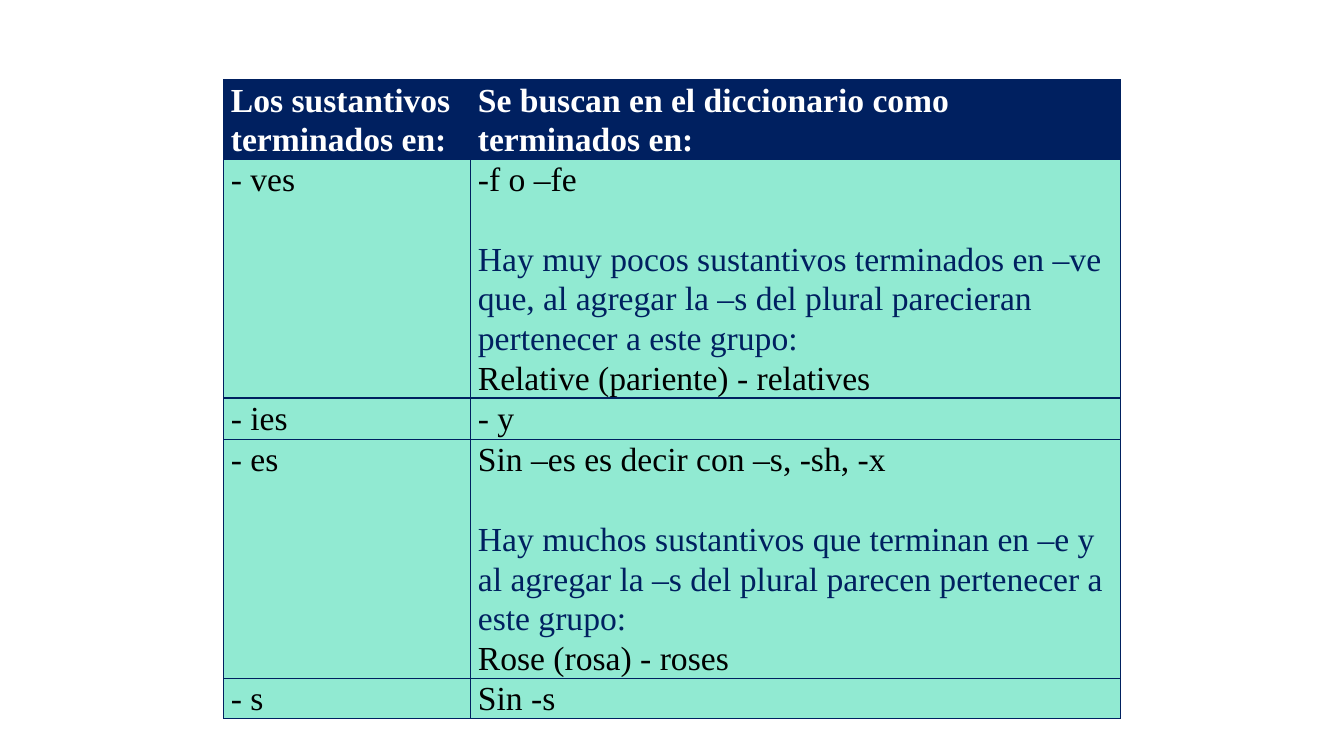
from lxml import etree
from pptx import Presentation
from pptx.dml.color import RGBColor
from pptx.oxml.ns import qn
from pptx.util import Inches, Pt

NAVY = RGBColor(0x00, 0x20, 0x60)
MINT = RGBColor(0x91, 0xEA, 0xD2)
WHITE = RGBColor(0xFF, 0xFF, 0xFF)
BLACK = RGBColor(0x00, 0x00, 0x00)
FONT = "Times New Roman"
LINE_GAP = Pt(28.5)
COLUMN_SHARES = (0.2756, 0.7244)
ROW_HEIGHTS = (0.78, 2.37, 0.41, 2.37, 0.4)
ENDINGS = [
    (["Los sustantivos terminados en:"],
     ["Se buscan en el diccionario como terminados en:"]),
    (["- ves"],
     ["-f o –fe",
      "Hay muy pocos sustantivos terminados en –ve que, al agregar la –s "
      "del plural parecieran pertenecer a este grupo:",
      "Relative (pariente) - relatives"]),
    (["- ies"], ["- y"]),
    (["- es"],
     ["Sin –es es decir con –s, -sh, -x",
      "Hay muchos sustantivos que terminan en –e y al agregar la –s "
      "del plural parecen pertenecer a este grupo:",
      "Rose (rosa) - roses"]),
    (["- s"], ["Sin -s"]),
]


def set_borders(cell, color, width):
    """Draw the same solid line on the four sides of a cell."""
    properties = cell._tc.get_or_add_tcPr()
    for position, side in enumerate(("lnL", "lnR", "lnT", "lnB")):
        line = etree.Element(qn(f"a:{side}"), w=str(width))
        fill = etree.SubElement(line, qn("a:solidFill"))
        etree.SubElement(fill, qn("a:srgbClr"), val=str(color))
        properties.insert(position, line)


def fill_cell(cell, texts, is_header):
    """Write the paragraphs of a cell, with the remark set apart in navy."""
    cell.margin_left = cell.margin_right = Inches(0.07)
    cell.margin_top = cell.margin_bottom = 0
    cell.fill.solid()
    cell.fill.fore_color.rgb = NAVY if is_header else MINT
    set_borders(cell, NAVY, Pt(1))
    frame = cell.text_frame
    for index, text in enumerate(texts):
        is_remark = index == 1
        paragraph = frame.add_paragraph() if index else frame.paragraphs[0]
        paragraph.line_spacing = 1.07
        paragraph.space_before = LINE_GAP if is_remark else Pt(0)
        run = paragraph.add_run()
        run.text = text
        run.font.name = FONT
        run.font.size = Pt(24)
        run.font.bold = is_header
        run.font.color.rgb = WHITE if is_header else NAVY if is_remark else BLACK


def add_endings_table(slide, left, top, width):
    """Place the table of plural endings and their dictionary forms."""
    height = Inches(sum(ROW_HEIGHTS))
    table = slide.shapes.add_table(
        len(ENDINGS), len(COLUMN_SHARES), left, top, width, height).table
    for column, share in zip(table.columns, COLUMN_SHARES):
        column.width = int(width * share)
    for row_index, (row, row_height) in enumerate(zip(table.rows, ROW_HEIGHTS)):
        row.height = Inches(row_height)
        for cell, texts in zip(row.cells, ENDINGS[row_index]):
            fill_cell(cell, texts, row_index == 0)


def main():
    """Build and save the presentation."""
    presentation = Presentation()
    presentation.slide_width = Inches(13.33)
    presentation.slide_height = Inches(7.5)
    slide = presentation.slides.add_slide(presentation.slide_layouts[6])
    add_endings_table(slide, Inches(2.22), Inches(0.79), Inches(8.89))
    presentation.save("out.pptx")


if __name__ == "__main__":
    main()
